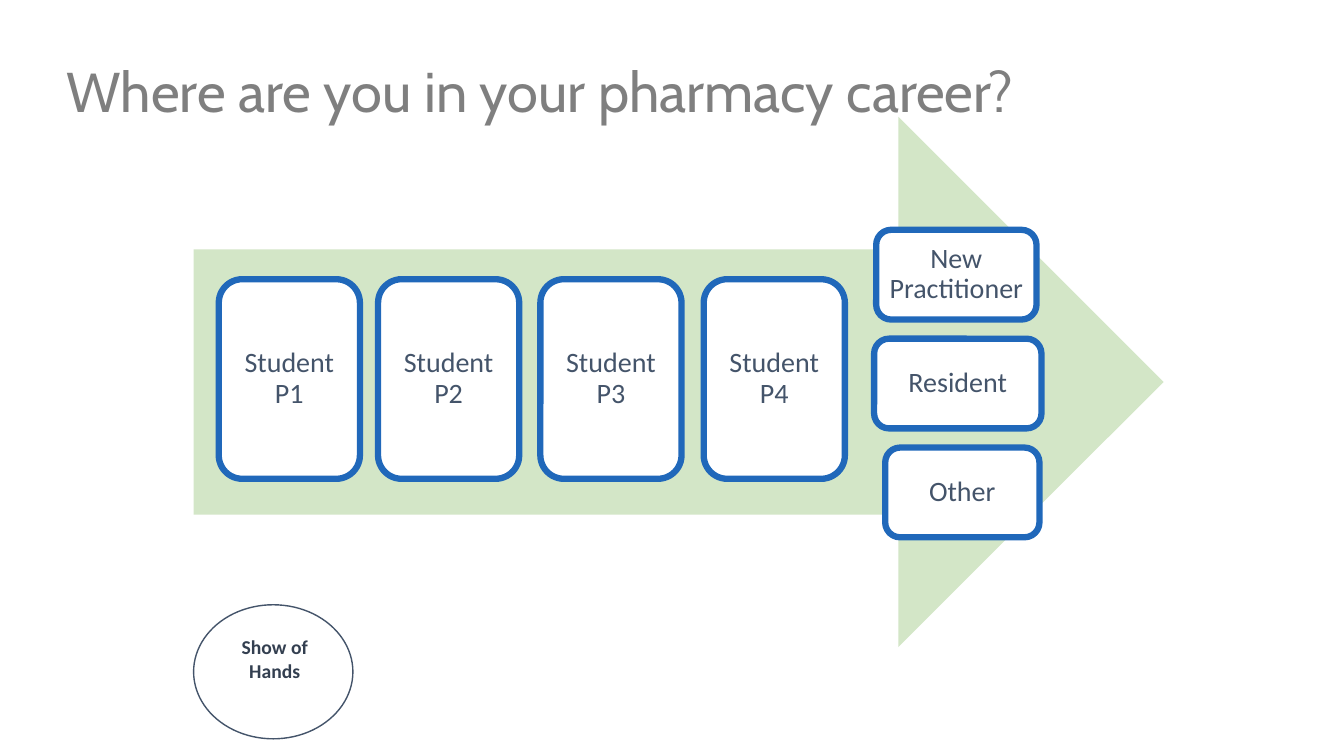
from dataclasses import dataclass

from lxml import etree
from pptx import Presentation
from pptx.dml.color import RGBColor
from pptx.enum import shapes, text
from pptx.oxml import ns
from pptx.util import Inches, Pt


@dataclass(frozen=True)
class Theme:
    title_font: str = "Cabin"
    body_font: str = "Calibri"
    title_size: int = 40
    card_size: int = 20
    prompt_size: int = 14
    title_gray: str = "7F7F7F"
    slate: str = "44546A"
    dark_slate: str = "333F50"
    arrow_green: str = "70AD47"
    card_blue: str = "2068BA"
    white: str = "FFFFFF"


THEME = Theme()
STUDENT_LEFTS = [2.17, 3.75, 5.36, 6.98]
# Label, left and width of each stacked card
GRADUATES = [
    ("New Practitioner", 8.69, 1.59),
    ("Resident", 8.67, 1.66),
    ("Other", 8.78, 1.53),
]
GRADUATE_TOP, GRADUATE_STEP = 2.28, 1.08


def write(frame, wording, font, size, color, bold=False, centered=True, spacing=None):
    frame.word_wrap = True
    frame.text = wording
    line = frame.paragraphs[0]
    line.alignment = text.PP_ALIGN.CENTER if centered else text.PP_ALIGN.LEFT
    line.space_before = Pt(0)
    if spacing:
        line.line_spacing = spacing
    style = line.runs[0].font
    style.name, style.size, style.bold = font, Pt(size), bold
    style.color.rgb = RGBColor.from_string(color)


def add_preset(slide, kind, box, fill=None, outline=None, width=1):
    preset = slide.shapes.add_shape(kind, *map(Inches, box))
    preset.shadow.inherit = False
    if fill:
        preset.fill.solid()
        preset.fill.fore_color.rgb = RGBColor.from_string(fill)
    else:
        preset.fill.background()
    if outline:
        preset.line.color.rgb = RGBColor.from_string(outline)
        preset.line.width = Pt(width)
    else:
        preset.line.fill.background()
    return preset


def add_title(slide, wording):
    title = slide.shapes.title
    title.left, title.top = Inches(0.56), Inches(0.59)
    title.width, title.height = Inches(12.15), Inches(1.01)
    frame = title.text_frame
    write(frame, wording, THEME.title_font, THEME.title_size, THEME.title_gray,
          centered=False, spacing=0.9)
    frame.vertical_anchor = text.MSO_ANCHOR.TOP
    frame.auto_size = text.MSO_AUTO_SIZE.NONE


def add_career_arrow(slide):
    arrow = add_preset(slide, shapes.MSO_SHAPE.RIGHT_ARROW,
                       (1.92, 1.16, 9.62, 5.26), fill=THEME.arrow_green)
    # 30 % opacity
    color = arrow.fill._xPr.find(".//" + ns.qn("a:srgbClr"))
    etree.SubElement(color, ns.qn("a:alpha"), val="30000")


def add_card(slide, wording, box):
    card = add_preset(slide, shapes.MSO_SHAPE.ROUNDED_RECTANGLE, box,
                      THEME.white, THEME.card_blue, 4.5)
    frame = card.text_frame
    frame.margin_left = frame.margin_right = Inches(0.06)
    frame.margin_top = frame.margin_bottom = Inches(0.06)
    frame.vertical_anchor = text.MSO_ANCHOR.MIDDLE
    write(frame, wording, THEME.body_font, THEME.card_size, THEME.slate, spacing=0.9)


def add_prompt(slide, wording):
    add_preset(slide, shapes.MSO_SHAPE.OVAL, (1.92, 6, 1.58, 1.33), outline=THEME.slate)
    label = slide.shapes.add_textbox(*map(Inches, (2.17, 6.25, 1.11, 0.64)))
    write(label.text_frame, wording, THEME.body_font, THEME.prompt_size,
          THEME.dark_slate, bold=True)


def main():
    deck = Presentation()
    deck.slide_width, deck.slide_height = Inches(13.33), Inches(7.5)
    slide = deck.slides.add_slide(deck.slide_layouts[5])

    add_title(slide, "Where are you in your pharmacy career?")
    add_prompt(slide, "Show of Hands")
    add_career_arrow(slide)

    # Student years along the shaft
    for year, left in enumerate(STUDENT_LEFTS, start=1):
        add_card(slide, f"Student P{year}", (left, 2.77, 1.4, 1.98))

    # Later stages stacked at the arrowhead
    for row, (stage, left, width) in enumerate(GRADUATES):
        add_card(slide, stage, (left, GRADUATE_TOP + row * GRADUATE_STEP, width, 0.89))

    deck.save("out.pptx")


if __name__ == "__main__":
    main()
